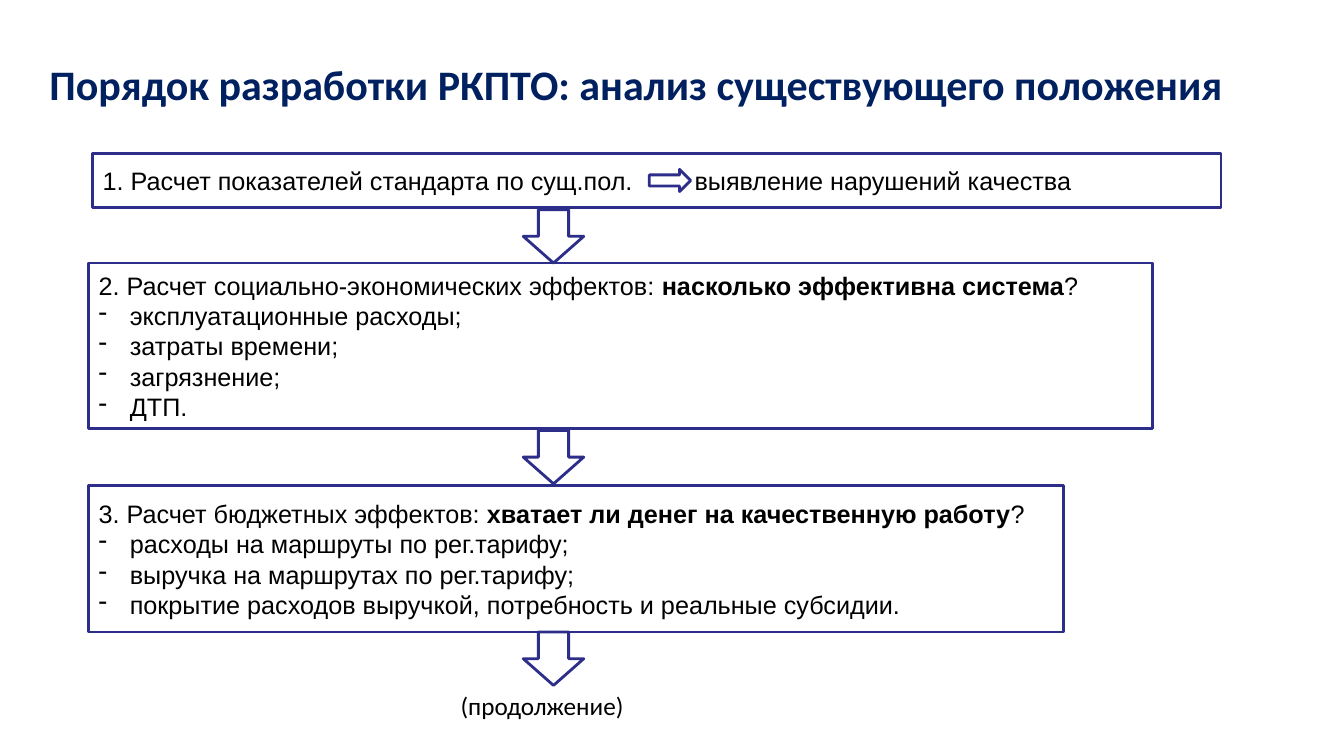
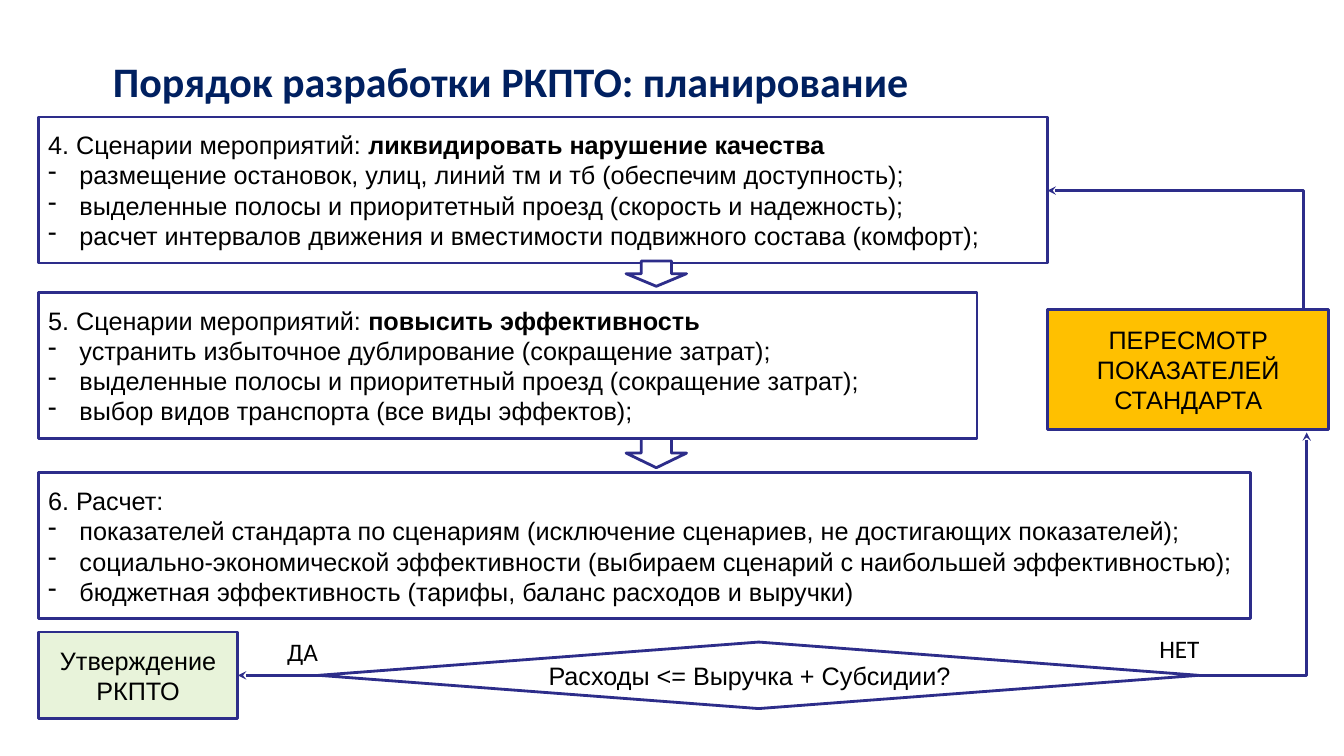
from lxml.etree import SubElement
from pptx import Presentation
from pptx.dml.color import RGBColor
from pptx.enum.shapes import MSO_CONNECTOR, MSO_SHAPE
from pptx.enum.text import MSO_ANCHOR, MSO_AUTO_SIZE, PP_ALIGN
from pptx.oxml.ns import qn
from pptx.util import Inches, Pt

COLORS = {
    "title": "002060",
    "text": "000000",
    "line": "2D2D8A",
    "box": "FFFFFF",
    "review": "FFC000",
    "approval": "E8F3DA",
}
BODY_FONT = "Arial"
LABEL_FONT = "Calibri"
ARROW_WIDTH = 0.6
BULLET_INDENT = Inches(0.31)


def color(name):
    """Return the named colour."""
    return RGBColor.from_string(COLORS[name])


def format_runs(paragraph, font_name=BODY_FONT, size=18, color_name="text"):
    """Give every run of a paragraph its font, size and colour."""
    for run in paragraph.runs:
        run.font.name = font_name
        run.font.size = Pt(size)
        run.font.color.rgb = color(color_name)


def add_titled_slide(presentation, title, left, top, width, height):
    """Add a title-only slide with its formatted title."""
    slide = presentation.slides.add_slide(presentation.slide_layouts[5])
    shape = slide.shapes.title
    shape.left, shape.top = Inches(left), Inches(top)
    shape.width, shape.height = Inches(width), Inches(height)
    text_frame = shape.text_frame
    text_frame.text = title
    text_frame.auto_size = MSO_AUTO_SIZE.NONE
    text_frame.vertical_anchor = MSO_ANCHOR.MIDDLE
    paragraph = text_frame.paragraphs[0]
    paragraph.alignment = PP_ALIGN.LEFT
    paragraph.line_spacing = 0.9
    format_runs(paragraph, LABEL_FONT, 30, "title")
    paragraph.runs[0].font.bold = True
    return slide


def add_outlined_shape(slide, kind, left, top, width, height, fill="box"):
    """Add a filled shape with the common outline and no shadow."""
    shape = slide.shapes.add_shape(
        kind, Inches(left), Inches(top), Inches(width), Inches(height))
    shape.shadow.inherit = False
    shape.fill.solid()
    shape.fill.fore_color.rgb = color(fill)
    shape.line.color.rgb = color("line")
    shape.line.width = Pt(2)
    return shape


def add_text_shape(slide, kind, text, left, top, width, height,
                   fill="box", alignment=PP_ALIGN.LEFT):
    """Add an outlined shape holding one paragraph."""
    shape = add_outlined_shape(slide, kind, left, top, width, height, fill)
    shape.text_frame.word_wrap = True
    shape.text_frame.vertical_anchor = MSO_ANCHOR.MIDDLE
    shape.text_frame.text = text
    paragraph = shape.text_frame.paragraphs[0]
    paragraph.alignment = alignment
    format_runs(paragraph)
    return shape


def add_step(slide, heading, bullets, left, top, width, height=1.45):
    """Add a step box with a heading of plain and bold parts and dashed items."""
    shape = add_text_shape(
        slide, MSO_SHAPE.RECTANGLE, heading[0], left, top, width, height)
    paragraph = shape.text_frame.paragraphs[0]
    for index, part in enumerate(heading[1:], 1):
        run = paragraph.add_run()
        run.text = part
        run.font.bold = index == 1
    format_runs(paragraph)
    for bullet in bullets:
        paragraph = shape.text_frame.add_paragraph()
        paragraph.text = bullet
        paragraph.alignment = PP_ALIGN.LEFT
        properties = paragraph._p.get_or_add_pPr()
        properties.set("marL", str(BULLET_INDENT))
        properties.set("indent", str(-BULLET_INDENT))
        SubElement(properties, qn("a:buChar")).set("char", "-")
        format_runs(paragraph)
    return shape


def add_tab_stop(paragraph, position):
    """Add a left tab stop to a paragraph."""
    tabs = SubElement(paragraph._p.get_or_add_pPr(), qn("a:tabLst"))
    tab = SubElement(tabs, qn("a:tab"))
    tab.set("pos", str(Inches(position)))
    tab.set("algn", "l")


def add_down_arrow(slide, left, top, height):
    """Add a block arrow leading to the next step."""
    add_outlined_shape(
        slide, MSO_SHAPE.DOWN_ARROW, left, top, ARROW_WIDTH, height)


def add_label(slide, text, left, top, width):
    """Add a one-line label."""
    shape = slide.shapes.add_textbox(
        Inches(left), Inches(top), Inches(width), Inches(0.4))
    shape.text_frame.word_wrap = False
    shape.text_frame.auto_size = MSO_AUTO_SIZE.SHAPE_TO_FIT_TEXT
    shape.text_frame.text = text
    format_runs(shape.text_frame.paragraphs[0], LABEL_FONT)


def add_arrow(slide, start, end, arrow_end="tailEnd", bent=False):
    """Add a stealth arrow, straight or turning once after a horizontal leg."""
    kind = MSO_CONNECTOR.ELBOW if bent else MSO_CONNECTOR.STRAIGHT
    connector = slide.shapes.add_connector(
        kind, *(Inches(value) for value in (*start, *end)))
    connector.line.color.rgb = color("line")
    connector.line.width = Pt(2)
    properties = connector._element.spPr
    if bent:
        properties.find(qn("a:prstGeom")).set("prst", "bentConnector2")
    SubElement(properties.find(qn("a:ln")), qn(f"a:{arrow_end}")).set(
        "type", "stealth")
    SubElement(properties, qn("a:effectLst"))
    return connector


def build_analysis_slide(presentation):
    """Build the slide on the analysis of the present state."""
    slide = add_titled_slide(
        presentation, "Порядок разработки РКПТО: анализ существующего положения",
        0.39, 0.5, 11.92, 0.73)
    indicators = add_text_shape(
        slide, MSO_SHAPE.RECTANGLE,
        "1. Расчет показателей стандарта по сущ.пол.\tвыявление нарушений качества",
        0.92, 1.52, 11.19, 0.54)
    add_tab_stop(indicators.text_frame.paragraphs[0], 5.87)
    add_outlined_shape(slide, MSO_SHAPE.RIGHT_ARROW, 6.44, 1.68, 0.41, 0.22)
    add_step(
        slide,
        ["2. Расчет социально-экономических эффектов: ",
         "насколько эффективна система", "?"],
        ["эксплуатационные расходы;", "затраты времени;", "загрязнение;", "ДТП."],
        0.88, 2.61, 10.55, 1.64)
    add_step(
        slide,
        ["3. Расчет бюджетных эффектов: ",
         "хватает ли денег на качественную работу", "?"],
        ["расходы на маршруты по рег.тарифу;",
         "выручка на маршрутах по рег.тарифу;",
         "покрытие расходов выручкой, потребность и реальные субсидии."],
        0.88, 4.82, 9.67)
    for top in (2.08, 4.27, 6.27):
        add_down_arrow(slide, 5.19, top, 0.53)
    add_label(slide, "(продолжение)", 4.47, 6.8, 1.84)


def build_planning_slide(presentation):
    """Build the slide on planning with its decision loop."""
    slide = add_titled_slide(
        presentation, "Порядок разработки РКПТО: планирование",
        1.02, 0.5, 10.57, 0.66)
    add_step(
        slide,
        ["4. Сценарии мероприятий: ", "ликвидировать нарушение качества"],
        ["размещение остановок, улиц, линий тм и тб (обеспечим доступность);",
         "выделенные полосы и приоритетный проезд (скорость и надежность);",
         "расчет интервалов движения и вместимости подвижного состава (комфорт);"],
        0.38, 1.16, 10.01)
    add_step(
        slide,
        ["5. Сценарии мероприятий: ", "повысить эффективность"],
        ["устранить избыточное дублирование (сокращение затрат);",
         "выделенные полосы и приоритетный проезд (сокращение затрат);",
         "выбор видов транспорта (все виды эффектов);"],
        0.38, 2.9, 9.31)
    add_step(
        slide,
        ["6. Расчет:"],
        ["показателей стандарта по сценариям (исключение сценариев, не достигающих показателей);",
         "социально-экономической эффективности (выбираем сценарий с наибольшей эффективностью);",
         "бюджетная эффективность (тарифы, баланс расходов и выручки)"],
        0.38, 4.69, 12.02)
    add_down_arrow(slide, 6.21, 2.59, 0.25)
    add_down_arrow(slide, 6.21, 4.35, 0.29)
    decision = add_text_shape(
        slide, MSO_SHAPE.FLOWCHART_DECISION, "Расходы <= Выручка + Субсидии?",
        3.16, 6.37, 8.73, 0.66)
    add_text_shape(
        slide, MSO_SHAPE.RECTANGLE, "ПЕРЕСМОТР ПОКАЗАТЕЛЕЙ СТАНДАРТА",
        10.39, 3.07, 2.79, 1.19, "review", PP_ALIGN.CENTER)
    approval = add_text_shape(
        slide, MSO_SHAPE.RECTANGLE, "Утверждение РКПТО",
        0.38, 6.27, 1.98, 0.86, "approval", PP_ALIGN.CENTER)
    add_arrow(slide, (11.89, 6.7), (12.96, 4.29), bent=True)
    add_arrow(slide, (10.39, 1.89), (12.93, 3.07), "headEnd", bent=True)
    approval_arrow = add_arrow(slide, (3.16, 6.7), (2.36, 6.7))
    approval_arrow.begin_connect(decision, 1)
    approval_arrow.end_connect(approval, 3)
    add_label(slide, "НЕТ", 11.4, 6.23, 0.6)
    add_label(slide, "ДА", 2.75, 6.26, 0.51)


def main():
    """Build and save the presentation."""
    presentation = Presentation()
    presentation.slide_width = Inches(13.33)
    presentation.slide_height = Inches(7.5)
    build_analysis_slide(presentation)
    build_planning_slide(presentation)
    presentation.save("out.pptx")


if __name__ == "__main__":
    main()
